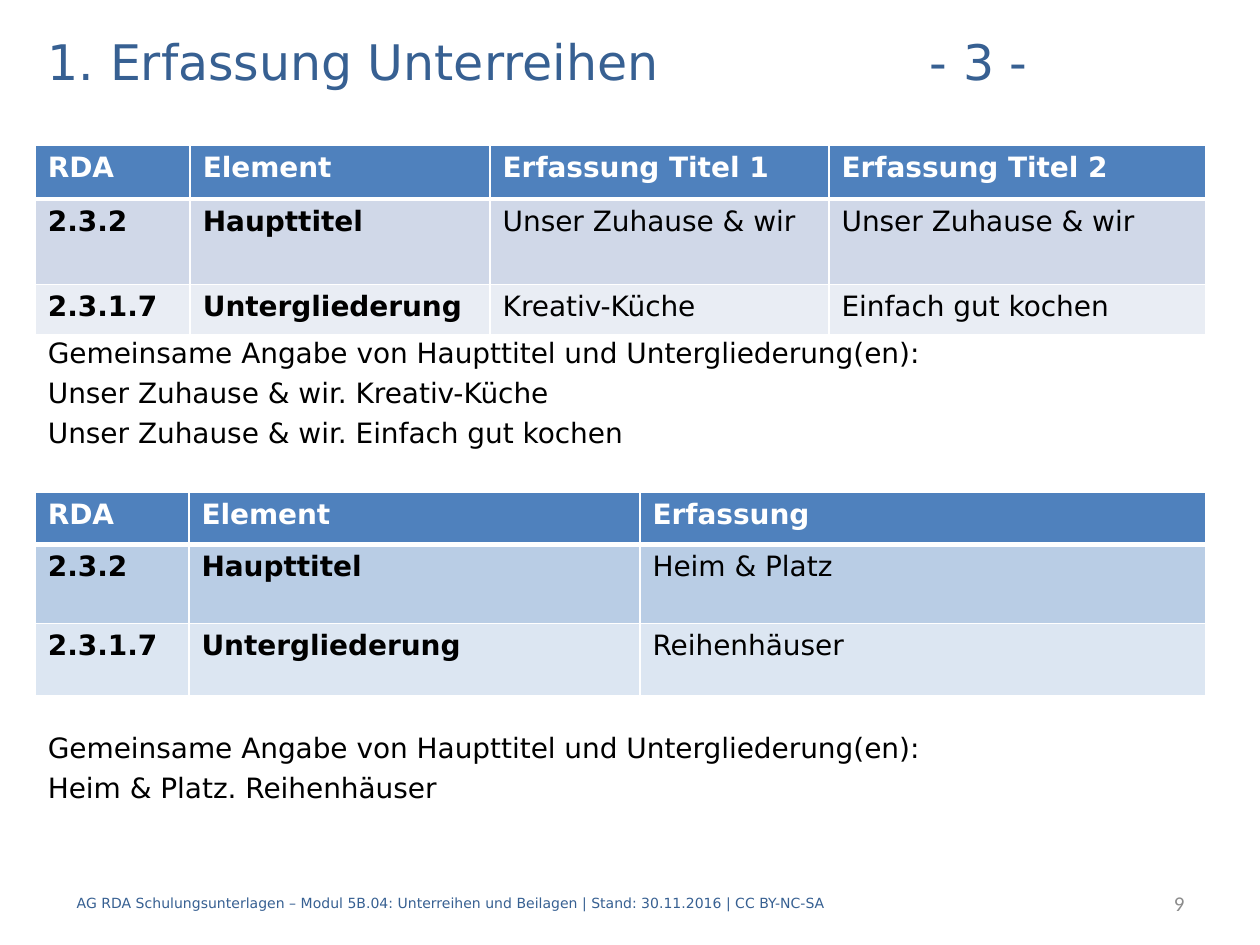
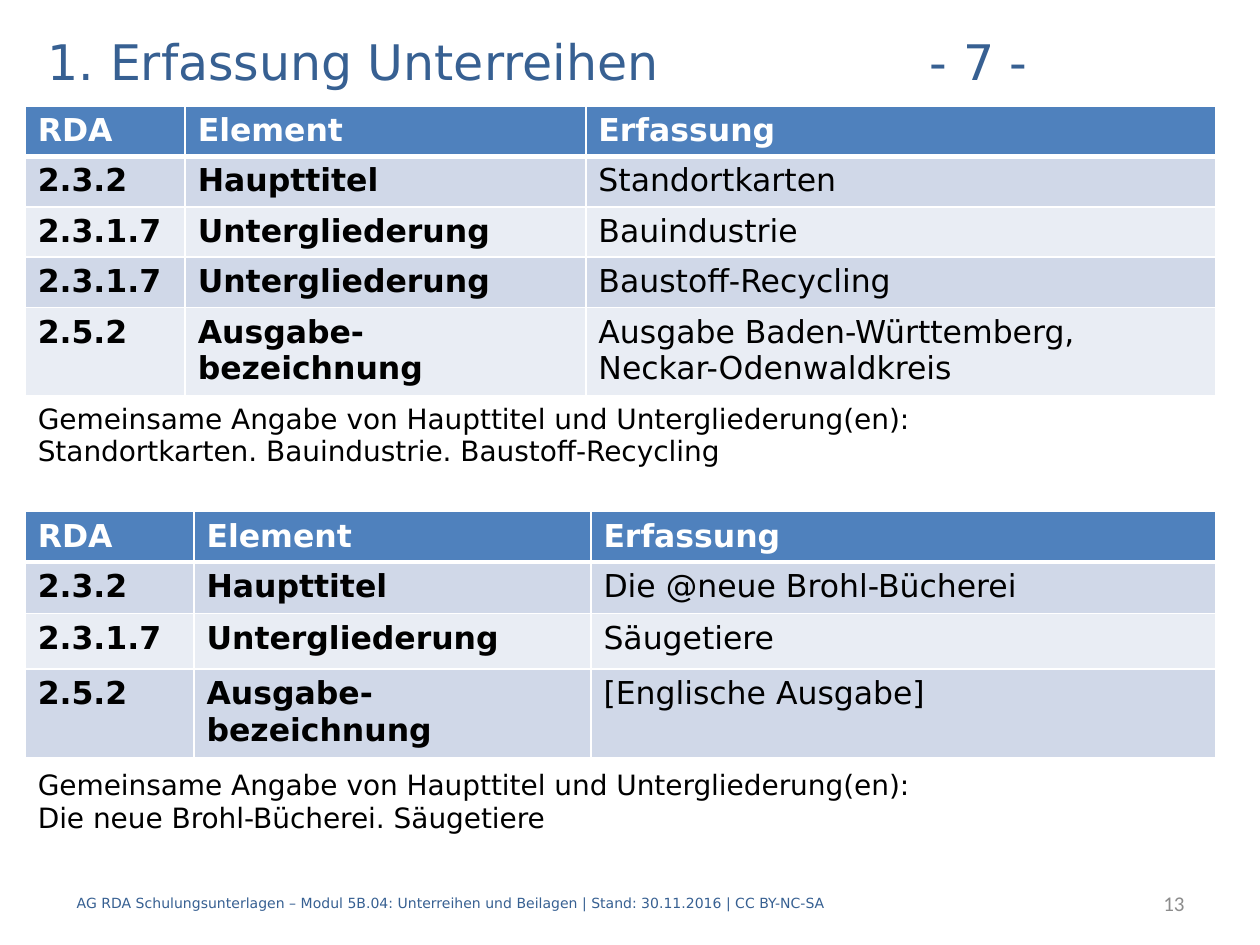
from dataclasses import dataclass

from lxml import etree
from pptx import Presentation
from pptx.dml.color import RGBColor
from pptx.enum.text import MSO_ANCHOR, MSO_AUTO_SIZE, PP_ALIGN
from pptx.oxml.ns import qn
from pptx.util import Inches, Pt

LEFT, RIGHT = PP_ALIGN.LEFT, PP_ALIGN.RIGHT
TOP, MIDDLE = MSO_ANCHOR.TOP, MSO_ANCHOR.MIDDLE
NO_FIT = MSO_AUTO_SIZE.NONE
TITLE_ONLY, TITLE_AND_BODY = 5, 1


@dataclass(frozen=True)
class Theme:
    font: str = "DejaVu Sans"
    number_font: str = "Calibri"
    title: str = "376092"
    text: str = "000000"
    number: str = "8C8C8C"
    white: str = "FFFFFF"
    header: str = "4F81BD"
    pale_bands: tuple = ("D0D8E8", "E9EDF4")
    blue_bands: tuple = ("B9CDE5", "DCE6F2")
    title_size: int = 28
    large_size: int = 18
    body_size: int = 16
    number_size: int = 12
    footer_size: int = 8


THEME = Theme()

TITLE = "1. Erfassung Unterreihen\t\t\t- {} -"
FOOTER = ("AG RDA Schulungsunterlagen – Modul 5B.04: Unterreihen und Beilagen"
          " | Stand: 30.11.2016 | CC BY-NC-SA")
COMMON = "Gemeinsame Angabe von Haupttitel und Untergliederung(en):"
HEADER = ("RDA", "Element", "Erfassung")
MAIN = ("2.3.2", "Haupttitel")
PART = ("2.3.1.7", "Untergliederung")
EDITION = ("2.5.2", "Ausgabe-bezeichnung")

TITLE_BOX = (0.28, 0.2, 9.45, 0.56)
BODY_BOX = (0.28, 0.92, 9.45, 5.98)
FOOTER_BOX = (0.51, 6.97, 8.35, 0.4)
NUMBER_BOX = (7.91, 6.97, 1.59, 0.4)
BODY_TOP_INSET = 1.74
LINE_GAP, GROUP_GAP = 3.7, 160.8  # points before a line / before the next group

PAGES = [
    {
        "part": 3, "number": 9, "size": THEME.body_size,
        "body": [
            [COMMON, "Unser Zuhause & wir. Kreativ-Küche",
             "Unser Zuhause & wir. Einfach gut kochen"],
            [COMMON, "Heim & Platz. Reihenhäuser"],
        ],
        "tables": [
            {"at": (0.28, 1.15), "columns": (1.23, 2.38, 2.69, 2.99),
             "heights": (0.43, 0.68, 0.4), "bands": THEME.pale_bands,
             "rows": [("RDA", "Element", "Erfassung Titel 1", "Erfassung Titel 2"),
                      (*MAIN, "Unser Zuhause & wir", "Unser Zuhause & wir"),
                      (*PART, "Kreativ-Küche", "Einfach gut kochen")]},
            {"at": (0.28, 3.91), "columns": (1.22, 3.58, 4.49),
             "heights": (0.41, 0.63, 0.57), "bands": THEME.blue_bands,
             "rows": [HEADER, (*MAIN, "Heim & Platz"), (*PART, "Reihenhäuser")]},
        ],
        "captions": [],
    },
    {
        "part": 7, "number": 13, "size": THEME.large_size,
        "body": [],
        "tables": [
            {"at": (0.2, 0.84), "columns": (1.27, 3.18, 5),
             "heights": (0.38, 0.39, 0.39, 0.39, 0.68), "bands": THEME.pale_bands,
             "rows": [HEADER, (*MAIN, "Standortkarten"), (*PART, "Bauindustrie"),
                      (*PART, "Baustoff-Recycling"),
                      (*EDITION, "Ausgabe Baden-Württemberg, Neckar-Odenwaldkreis")]},
            {"at": (0.2, 4.06), "columns": (1.34, 3.15, 4.96),
             "heights": (0.38, 0.41, 0.44, 0.68), "bands": THEME.pale_bands,
             "rows": [HEADER, (*MAIN, "Die @neue Brohl-Bücherei"),
                      (*PART, "Säugetiere"), (*EDITION, "[Englische Ausgabe]")]},
        ],
        "captions": [
            {"at": (0.2, 3.2), "width": 9, "height": 0.71,
             "lines": [COMMON, "Standortkarten. Bauindustrie. Baustoff-Recycling"]},
            {"at": (0.2, 6.11), "width": 9, "height": 0.53,
             "lines": [COMMON, "Die neue Brohl-Bücherei. Säugetiere"]},
        ],
    },
]


def apply(target, values):
    for name, value in values.items():
        setattr(target, name, value)


def place(shape, box):
    apply(shape, dict(zip(("left", "top", "width", "height"), map(Inches, box))))


def write(frame, lines, size, color=THEME.text, bold=False, font=THEME.font, align=LEFT):
    """Fill a text frame with one formatted paragraph per line."""
    for index, line in enumerate(lines):
        para = frame.add_paragraph() if index else frame.paragraphs[0]
        apply(para, {"alignment": align, "space_before": Pt(0)})
        span = para.add_run()
        span.text = line
        apply(span.font, {"name": font, "size": Pt(size), "bold": bold})
        span.font.color.rgb = RGBColor.from_string(color)


def add_title(page, part):
    title = page.shapes.title
    place(title, TITLE_BOX)
    frame = title.text_frame
    apply(frame, {"vertical_anchor": MIDDLE, "auto_size": NO_FIT, "word_wrap": True})
    write(frame, [TITLE.format(part)], THEME.title_size, THEME.title)
    frame.paragraphs[0]._p.get_or_add_pPr().set("defTabSz", str(Inches(1)))


def add_body(page, groups):
    body = page.placeholders[1]
    place(body, BODY_BOX)
    frame = body.text_frame
    apply(frame, {"vertical_anchor": TOP, "auto_size": NO_FIT, "word_wrap": True,
                  "margin_top": Inches(BODY_TOP_INSET)})
    write(frame, [line for group in groups for line in group], THEME.body_size)
    gaps = [LINE_GAP if index else GROUP_GAP
            for group in groups for index in range(len(group))]
    gaps[0] = 0
    for para, gap in zip(frame.paragraphs, gaps):
        para.space_before = Pt(gap)
        properties = para._p.get_or_add_pPr()
        properties.set("marL", "0")
        properties.set("indent", "0")
        etree.SubElement(properties, qn("a:buNone"))


def add_label(page, box, text, **style):
    label = page.shapes.add_textbox(*map(Inches, box))
    apply(label.text_frame, {"word_wrap": True, "vertical_anchor": MIDDLE})
    write(label.text_frame, [text], **style)


def set_borders(cell, bottom):
    properties = cell._tc.get_or_add_tcPr()
    for side, width in (("L", 1), ("R", 1), ("T", 1), ("B", bottom)):
        line = etree.SubElement(properties, qn(f"a:ln{side}"), w=str(Pt(width)))
        fill = etree.SubElement(line, qn("a:solidFill"))
        etree.SubElement(fill, qn("a:srgbClr"), val=THEME.white)


def new_table(page, at, columns, heights):
    table = page.shapes.add_table(len(heights), len(columns), *map(
        Inches, (*at, sum(columns), sum(heights)))).table
    for column, width in zip(table.columns, columns):
        column.width = Inches(width)
    for row, height in zip(table.rows, heights):
        row.height = Inches(height)
    return table


def add_element_table(page, at, columns, heights, bands, rows, size):
    """Header row, banded rows, and bold text in the first two columns."""
    table = new_table(page, at, columns, heights)
    for r, row in enumerate(rows):
        is_header = r == 0
        fill = THEME.header if is_header else bands[(r - 1) % 2]
        for c, text in enumerate(row):
            cell = table.cell(r, c)
            set_borders(cell, 3 if is_header else 1)
            cell.fill.solid()
            cell.fill.fore_color.rgb = RGBColor.from_string(fill)
            write(cell.text_frame, [text], size,
                  THEME.white if is_header else THEME.text, is_header or c < 2)


def add_caption(page, at, width, height, lines):
    table = new_table(page, at, [width], [height])
    apply(table, {"first_row": False, "horz_banding": False})
    cell = table.cell(0, 0)
    set_borders(cell, 1)
    cell.fill.background()
    apply(cell, {"margin_top": 0, "margin_bottom": 0})
    write(cell.text_frame, lines, THEME.body_size)


def add_page(deck, content):
    layout = TITLE_AND_BODY if content["body"] else TITLE_ONLY
    page = deck.slides.add_slide(deck.slide_layouts[layout])
    add_title(page, content["part"])
    if content["body"]:
        add_body(page, content["body"])
    add_label(page, FOOTER_BOX, FOOTER, size=THEME.footer_size, color=THEME.title)
    add_label(page, NUMBER_BOX, str(content["number"]), size=THEME.number_size,
              color=THEME.number, font=THEME.number_font, align=RIGHT)
    for table in content["tables"]:
        add_element_table(page, **table, size=content["size"])
    for caption in content["captions"]:
        add_caption(page, **caption)


def main():
    deck = Presentation()
    apply(deck, {"slide_width": Inches(10), "slide_height": Inches(7.5)})
    for content in PAGES:
        add_page(deck, content)
    deck.save("out.pptx")


if __name__ == "__main__":
    main()
